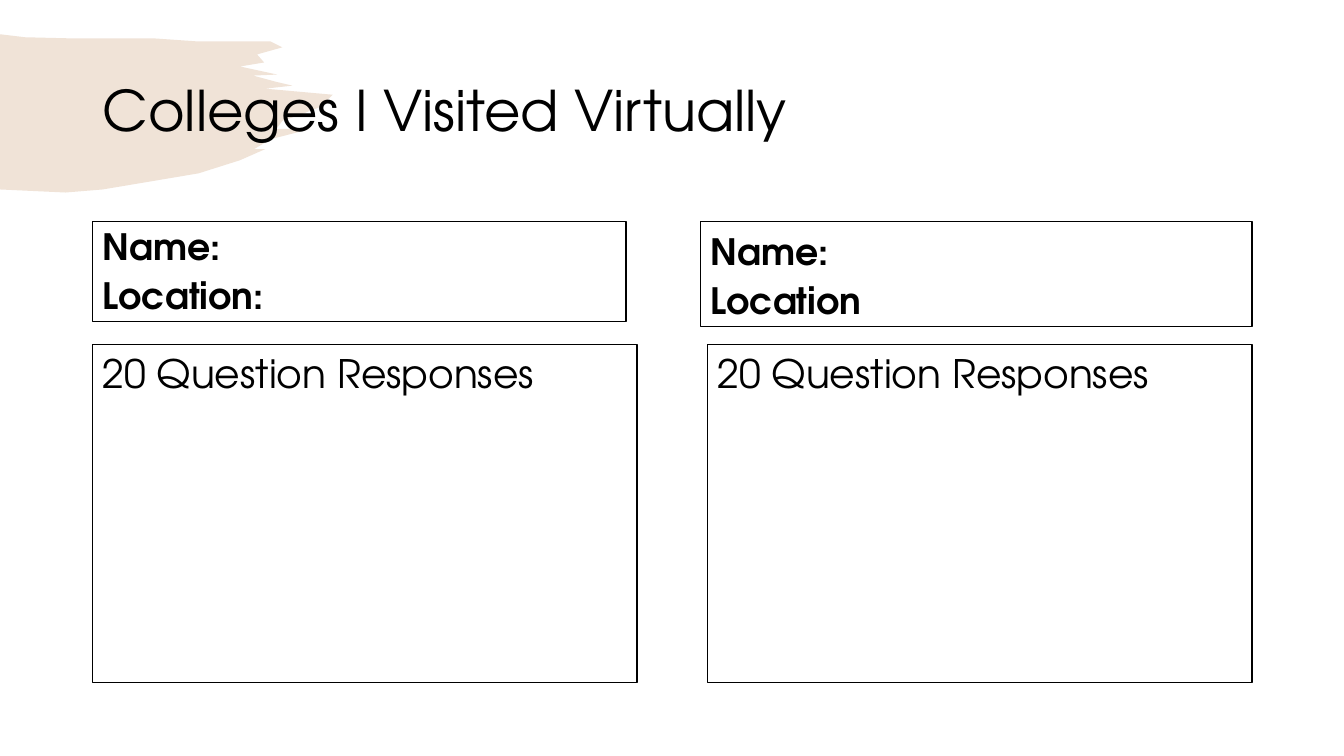
from dataclasses import dataclass

from lxml import etree
from pptx import Presentation
from pptx.dml.color import RGBColor
from pptx.enum.shapes import MSO_SHAPE
from pptx.enum.text import MSO_ANCHOR, PP_ALIGN
from pptx.oxml.ns import qn
from pptx.util import Inches, Pt

RECT = MSO_SHAPE.RECTANGLE
LEFT = PP_ALIGN.LEFT
TOP, MIDDLE, BOTTOM = MSO_ANCHOR.TOP, MSO_ANCHOR.MIDDLE, MSO_ANCHOR.BOTTOM
TITLE_ONLY = 5


@dataclass(frozen=True)
class Theme:
    font: str = "TeX Gyre Adventor"
    ink: RGBColor = RGBColor.from_string("000000")
    paper: RGBColor = RGBColor.from_string("FFFFFF")
    brush: RGBColor = RGBColor.from_string("B57337")
    brush_alpha: str = "20%"
    title: float = 40
    label: float = 25.9
    body: float = 28
    gap: float = 10
    border: float = 1


THEME = Theme()
SLIDE_W, SLIDE_H = 13.33, 7.5
MARGIN = 0.92
RIGHT = SLIDE_W - 0.91
HEADER_TOP, RESPONSE_TOP = 2.2, 3.42
RESPONSE_W, RESPONSE_H = 5.4, 3.35

BRUSH_OUTLINE = (
    (0, 0.34), (0.25, 0.37), (0.66, 0.38), (1.51, 0.38), (1.94, 0.41),
    (2.48, 0.41), (2.68, 0.41), (2.8, 0.47), (2.55, 0.54), (2.62, 0.62),
    (2.38, 0.66), (2.75, 0.74), (2.51, 0.75), (2.73, 0.81), (2.9, 0.85),
    (2.63, 0.88), (3.3, 0.94), (3.18, 1.06), (3, 1.13), (2.8, 1.2),
    (2.74, 1.28), (3.08, 1.28), (2.69, 1.38), (2.52, 1.48), (2.63, 1.48),
    (2.38, 1.59), (1.97, 1.72), (1.02, 1.88), (0.65, 1.91), (0, 1.88),
)


def add_brush(s, left, top):
    start, *rest = [(Inches(left + x), Inches(top + y)) for x, y in BRUSH_OUTLINE]
    builder = s.shapes.build_freeform(*start, scale=1.0)
    builder.add_line_segments(rest, close=True)
    sp = builder.convert_to_shape()
    sp.shadow.inherit = False
    sp.line.fill.background()
    sp.fill.solid()
    sp.fill.fore_color.rgb = THEME.brush
    color = next(sp.element.iter(qn("a:srgbClr")))
    alpha = str(int(THEME.brush_alpha.rstrip("%")) * 1000)
    etree.SubElement(color, qn("a:alpha"), val=alpha)
    s.shapes.title.element.addprevious(sp.element)


def write(sp, lines, size, anchor, spacing, bold=False, gap=0):
    tf = sp.text_frame
    tf.word_wrap = True
    tf.vertical_anchor = anchor
    tf.text = "\n".join(lines)
    for p in tf.paragraphs:
        p.alignment = LEFT
        p.line_spacing = spacing
        p.space_before = Pt(gap)
        for r in p.runs:
            r.font.name = THEME.font
            r.font.size = Pt(size)
            r.font.bold = bold
            r.font.color.rgb = THEME.ink


def add_title(s, text, left, top, width, height):
    sp = s.shapes.title
    sp.left, sp.top = Inches(left), Inches(top)
    sp.width, sp.height = Inches(width), Inches(height)
    write(sp, [text], THEME.title, MIDDLE, 0.9)


def add_panel(s, left, top, width, height):
    sp = s.shapes.add_shape(RECT, Inches(left), Inches(top), Inches(width), Inches(height))
    sp.shadow.inherit = False
    sp.fill.solid()
    sp.fill.fore_color.rgb = THEME.paper
    sp.line.color.rgb = THEME.ink
    sp.line.width = Pt(THEME.border)
    return sp


def add_college(s, header_box, response_left, labels):
    header = add_panel(s, *header_box)
    write(header, labels, THEME.label, BOTTOM, 0.8, bold=True, gap=THEME.gap)
    response = add_panel(s, response_left, RESPONSE_TOP, RESPONSE_W, RESPONSE_H)
    write(response, ["20 Question Responses"], THEME.body, TOP, 1.0, gap=THEME.gap)


def add_visits_slide(prs):
    s = prs.slides.add_slide(prs.slide_layouts[TITLE_ONLY])
    add_brush(s, 0, 0)
    add_title(s, "Colleges I Visited Virtually", MARGIN, 0.4, RIGHT - MARGIN, 1.45)
    add_college(s, (MARGIN, HEADER_TOP, 5.29, 0.99), MARGIN, ["Name:", "Location:"])
    add_college(s, (RIGHT - 5.47, HEADER_TOP, 5.47, 1.04), RIGHT - RESPONSE_W, ["Name:", "Location"])


def main():
    prs = Presentation()
    prs.slide_width, prs.slide_height = Inches(SLIDE_W), Inches(SLIDE_H)
    add_visits_slide(prs)
    prs.save("out.pptx")


if __name__ == "__main__":
    main()
